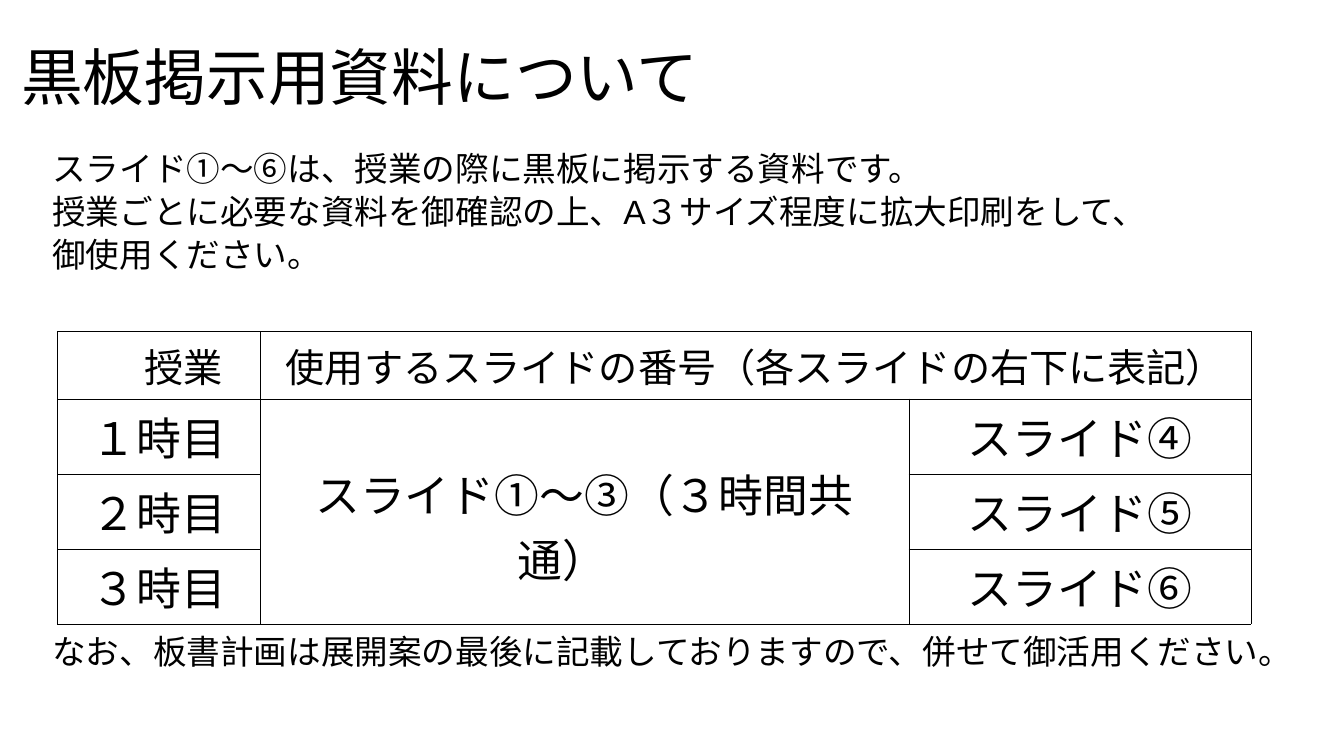
"""Build the slide that explains the handouts to post on the blackboard."""
import pptx
import pptx.dml.color
import pptx.enum.text
import pptx.oxml
import pptx.oxml.ns
import pptx.util

Cm = pptx.util.Cm
Pt = pptx.util.Pt
ALIGN = pptx.enum.text.PP_ALIGN
ANCHOR = pptx.enum.text.MSO_ANCHOR
BLACK = pptx.dml.color.RGBColor(0, 0, 0)
WHITE = pptx.dml.color.RGBColor(255, 255, 255)


def format_paragraph(paragraph, size, alignment):
    paragraph.alignment = alignment
    for run in paragraph.runs:
        run.font.size = Pt(size)
        run.font.name = "Arial" if run.text == "A" else "Calibri"
        run.font.color.rgb = BLACK


def add_text(slide, box, lines, size, alignment, line_spacing, anchor=ANCHOR.TOP):
    text_frame = slide.shapes.add_textbox(*[Cm(length) for length in box]).text_frame
    text_frame.word_wrap = True
    text_frame.vertical_anchor = anchor
    for index, line in enumerate(lines):
        paragraph = text_frame.add_paragraph() if index else text_frame.paragraphs[0]
        for text in line:
            paragraph.add_run().text = text
        paragraph.line_spacing = line_spacing
        if index:
            paragraph.space_before = Pt(7.5)
        format_paragraph(paragraph, size, alignment)


presentation = pptx.Presentation()
presentation.slide_width = Cm(33.87)
presentation.slide_height = Cm(19.05)
slide = presentation.slides.add_slide(presentation.slide_layouts[6])

add_text(slide, (0, 0.53, 18.16, 2.46), [["黒板掲示用資料について"]],
         44.1, ALIGN.CENTER, 0.9, ANCHOR.BOTTOM)
introduction = [
    ["スライド①～⑥は、授業の際に黒板に掲示する資料です。"],
    ["授業ごとに必要な資料を御確認の上、", "A", "３サイズ程度に拡大印刷をして、"],
    ["御使用ください。"],
]
add_text(slide, (1.07, 3.78, 32.7, 4), introduction, 24, ALIGN.LEFT, 0.81)
closing = [["なお、板書計画は展開案の最後に記載しておりますので、併せて御活用ください。"]]
add_text(slide, (1.07, 15.95, 32.7, 1.3), closing, 24, ALIGN.LEFT, 0.81)

lesson_rows = [
    ["授業", "使用するスライドの番号（各スライドの右下に表記）", ""],
    ["１時目", "スライド①～③（３時間共通）　", "スライド④"],
    ["２時目", "", "スライド⑤"],
    ["３時目", "", "スライド⑥"],
]
column_widths = [5.1, 16.36, 8.62]
row_heights = [1.69, 1.89, 1.89, 1.89]
table = slide.shapes.add_table(
    len(row_heights), len(column_widths), Cm(1.45), Cm(8.36),
    Cm(sum(column_widths)), Cm(sum(row_heights))).table
table.first_row = False
table.horz_banding = False
for column, width in zip(table.columns, column_widths):
    column.width = Cm(width)
for row, height in zip(table.rows, row_heights):
    row.height = Cm(height)
table.cell(0, 1).merge(table.cell(0, 2))
table.cell(1, 1).merge(table.cell(3, 1))

for row_index, texts in enumerate(lesson_rows):
    for column_index, text in enumerate(texts):
        cell = table.cell(row_index, column_index)
        if text:
            cell.text_frame.text = text
            format_paragraph(cell.text_frame.paragraphs[0],
                             32 if row_index else 28, ALIGN.CENTER)
        properties = cell._tc.get_or_add_tcPr()
        for side in ("lnL", "lnR", "lnT", "lnB"):
            properties.append(pptx.oxml.parse_xml(
                f'<a:{side} {pptx.oxml.ns.nsdecls("a")} w="6350"><a:solidFill>'
                f'<a:srgbClr val="{BLACK}"/></a:solidFill></a:{side}>'))
        cell.fill.solid()
        cell.fill.fore_color.rgb = WHITE

lesson_heading = table.cell(0, 0)
lesson_heading.margin_left = Cm(2.2)
lesson_heading.text_frame.paragraphs[0].alignment = ALIGN.LEFT
table.cell(1, 1).margin_top = Cm(1.55)

presentation.save("out.pptx")
